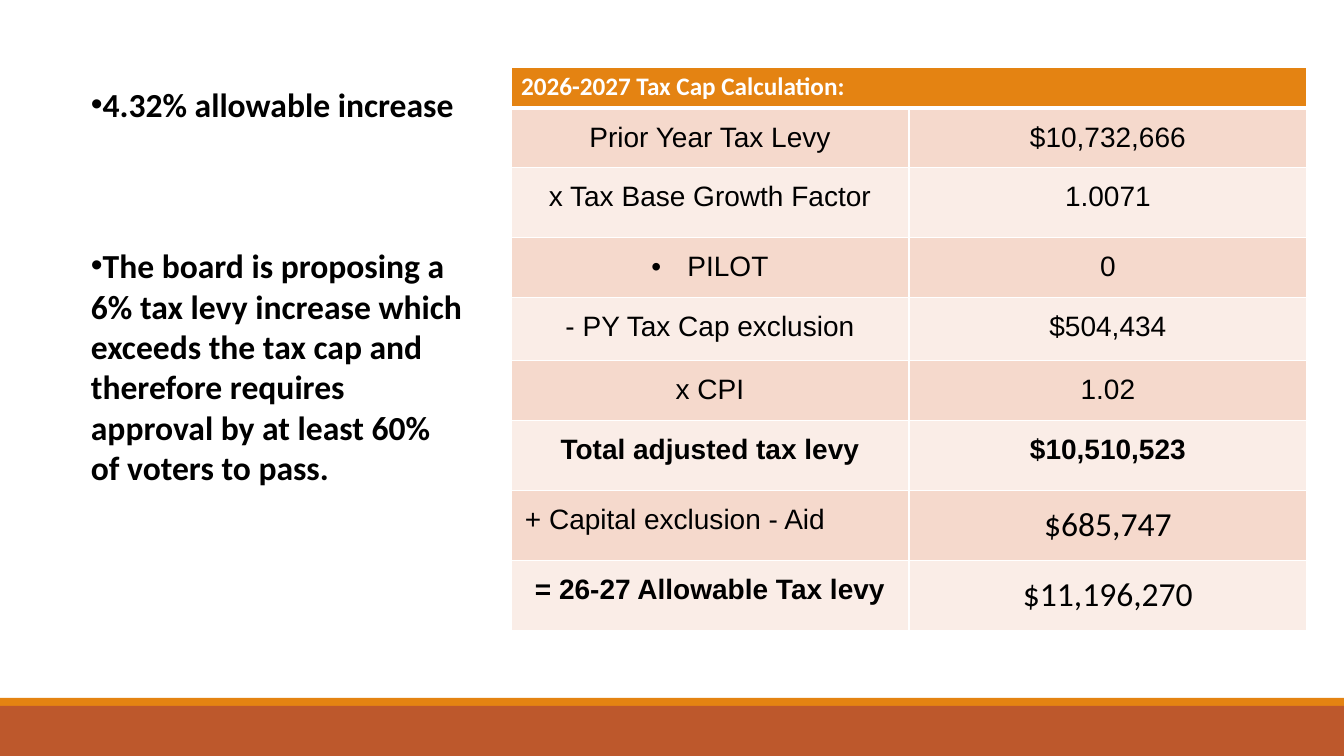
from lxml import etree
from pptx import Presentation
from pptx.dml.color import RGBColor
from pptx.enum.shapes import MSO_SHAPE
from pptx.enum.text import PP_ALIGN
from pptx.oxml.ns import qn
from pptx.util import Pt

RECTANGLE = MSO_SHAPE.RECTANGLE
LEFT, CENTER = PP_ALIGN.LEFT, PP_ALIGN.CENTER
PAGE_WIDTH, PAGE_HEIGHT = 1344, 756
EMU_PER_PX = 12192000 / PAGE_WIDTH
ORANGE, RUST, WHITE, BLACK = "E48312", "BD582C", "FFFFFF", "000000"
BANDS = ("F5D9CC", "FAEDE7")

ARIAL = ("Arial", 20, False)
ARIAL_BOLD = ("Arial", 20, True)
CALIBRI = ("Calibri", 24, False)
CALIBRI_BOLD = ("Calibri", 24, True)
HEADING = ("Calibri", 18, True)

LEVY_ROWS = [
    (60, "Prior Year Tax Levy", ARIAL, "$10,732,666", ARIAL),
    (70, "x Tax Base Growth Factor", ARIAL, "1.0071", ARIAL),
    (60, "PILOT", ARIAL, "0", ARIAL),
    (63, "- PY Tax Cap exclusion", ARIAL, "$504,434", ARIAL),
    (60, "x CPI", ARIAL, "1.02", ARIAL),
    (70, "Total adjusted tax levy", ARIAL_BOLD, "$10,510,523", ARIAL_BOLD),
    (70, "+ Capital exclusion - Aid", ARIAL, "$685,747", CALIBRI),
    (70, "= 26-27 Allowable Tax levy", ARIAL_BOLD, "$11,196,270", CALIBRI),
]
NOTES = [
    "4.32% allowable increase",
    "The board is proposing a 6% tax levy increase which exceeds the tax cap "
    "and therefore requires approval by at least 60% of voters to pass.",
]


def px(length):
    return round(length * EMU_PER_PX)


def color(value):
    return RGBColor.from_string(value)


def add_bullet(para, margin, indent):
    properties = para._p.get_or_add_pPr()
    properties.set("marL", str(px(margin)))
    properties.set("indent", str(px(indent)))
    font = etree.SubElement(properties, qn("a:buFont"))
    font.set("typeface", "Arial")
    etree.SubElement(properties, qn("a:buChar")).set("char", "•")


def add_span(para, text, style, ink=BLACK):
    span = para.add_run()
    span.text = text
    span.font.name, size, span.font.bold = style
    span.font.size = Pt(size)
    span.font.color.rgb = color(ink)


def set_borders(cell, top=1, bottom=1):
    properties = cell._tc.get_or_add_tcPr()
    widths = {"a:lnL": 1, "a:lnR": 1, "a:lnT": top, "a:lnB": bottom}
    for index, (side, width) in enumerate(widths.items()):
        line = etree.Element(qn(side), w=str(Pt(width)))
        fill = etree.SubElement(line, qn("a:solidFill"))
        etree.SubElement(fill, qn("a:srgbClr"), val=WHITE)
        properties.insert(index, line)


def fill_cell(cell, text, style, fill, align=CENTER, inset=14):
    cell.margin_left = cell.margin_right = px(inset)
    cell.margin_top = cell.margin_bottom = px(inset)
    cell.fill.solid()
    cell.fill.fore_color.rgb = color(fill)
    para = cell.text_frame.paragraphs[0]
    para.alignment = align
    if text == "PILOT":
        add_bullet(para, 36, -36)
    add_span(para, text, style)


def add_footer(page, left, top, width, height):
    stripe = 8
    for offset, depth, fill in ((0, stripe, ORANGE), (stripe, height - stripe, RUST)):
        band = page.shapes.add_shape(
            RECTANGLE, px(left), px(top + offset), px(width), px(depth))
        band.shadow.inherit = False
        band.fill.solid()
        band.fill.fore_color.rgb = color(fill)
        band.line.fill.background()


def add_levy_table(page, left, top, width):
    heights = [40] + [row[0] for row in LEVY_ROWS]
    table = page.shapes.add_table(
        len(heights), 2, px(left), px(top), px(width), px(sum(heights))).table
    table.horz_banding = False
    for row, height in zip(table.rows, heights):
        row.height = px(height)
    for column in table.columns:
        column.width = px(width / 2)

    heading = table.cell(0, 0)
    heading.merge(table.cell(0, 1))
    heading.margin_top = heading.margin_bottom = px(5)
    heading.fill.solid()
    heading.fill.fore_color.rgb = color(ORANGE)
    add_span(heading.text_frame.paragraphs[0], "2026-2027 Tax Cap Calculation:",
             HEADING, WHITE)
    for column in range(2):
        set_borders(table.cell(0, column), bottom=3)

    for index, (_, label, label_style, value, value_style) in enumerate(LEVY_ROWS):
        fill = BANDS[index % 2]
        label_cell, value_cell = table.cell(index + 1, 0), table.cell(index + 1, 1)
        align = LEFT if label.startswith("+") else CENTER
        fill_cell(label_cell, label, label_style, fill, align)
        fill_cell(value_cell, value, value_style, fill)
        for cell in (label_cell, value_cell):
            set_borders(cell, top=3 if index == 0 else 1)


def add_notes_text(page, left, top, width, height):
    box = page.shapes.add_textbox(px(left), px(top), px(width), px(height))
    frame = box.text_frame
    frame.word_wrap = True
    for index, note in enumerate(NOTES):
        para = frame.paragraphs[0] if index == 0 else frame.add_paragraph()
        para.line_spacing = Pt(28.8)
        if index:
            para.space_before = Pt(3 * 28.8)
        add_bullet(para, 0, 0)
        add_span(para, note, CALIBRI_BOLD)


def main():
    deck = Presentation()
    deck.slide_width, deck.slide_height = px(PAGE_WIDTH), px(PAGE_HEIGHT)
    page = deck.slides.add_slide(deck.slide_layouts[6])
    add_footer(page, 0, 698, PAGE_WIDTH, 58)
    add_levy_table(page, 511, 67, 796)
    add_notes_text(page, 81, 79, 395, 472)
    deck.save("out.pptx")


if __name__ == "__main__":
    main()
